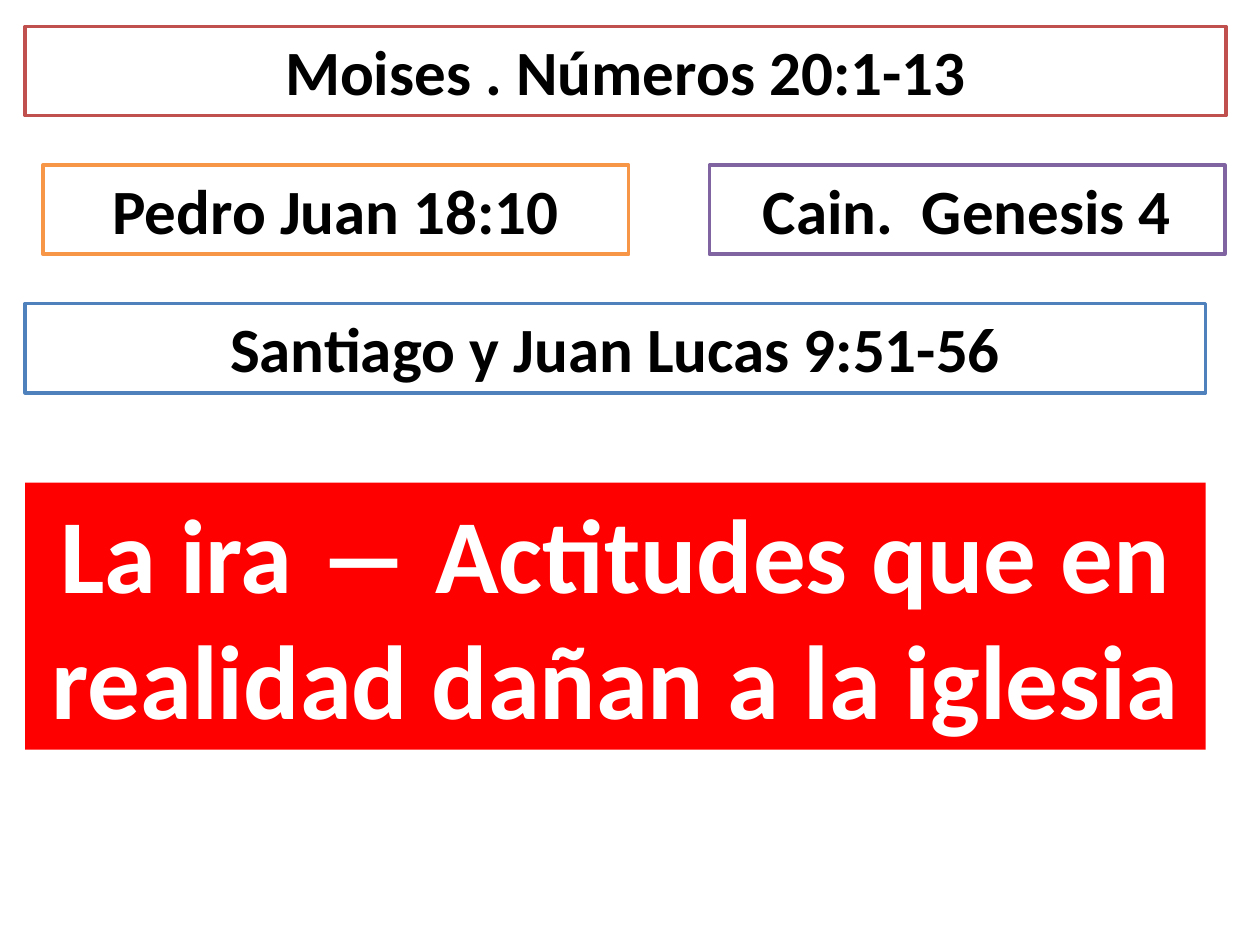
from pptx import Presentation
from pptx.dml.color import RGBColor as RGB
from pptx.enum.shapes import MSO_SHAPE as SHAPE
from pptx.enum.text import MSO_ANCHOR as ANCHOR, MSO_AUTO_SIZE as AUTO, PP_ALIGN as ALIGN
from pptx.util import Pt

COLORS = {
    "white": "FFFFFF", "black": "000000", "banner": "FF0000",
    "red": "C0504D", "purple": "8064A2", "orange": "F79646", "blue": "4F81BD",
}
LEFT, TOP, ROW_PITCH, ROW_HEIGHT = 14.4, 15.1, 79.2, 51
FULL_WIDTH = 674.6

# row, left, width, outline, text
VERSES = [
    (0, LEFT, 686.2, "red", "Moises . Números 20:1-13"),
    (1, 405.4, 294.5, "purple", "Cain.  Genesis 4"),
    (1, 24.5, 334.8, "orange", "Pedro Juan 18:10"),
    (2, LEFT, FULL_WIDTH, "blue", "Santiago y Juan Lucas 9:51-56"),
]
BANNER = "La ira ― Actitudes que en realidad dañan a la iglesia"


def color(name):
    return RGB.from_string(COLORS[name])


def add_box(slide, box, text, size, ink, fill, outline=None):
    sp = slide.shapes.add_shape(SHAPE.RECTANGLE, *map(Pt, box))
    sp.shadow.inherit = False
    sp.fill.solid()
    sp.fill.fore_color.rgb = color(fill)
    if outline:
        sp.line.color.rgb = color(outline)
        sp.line.width = Pt(2)
    else:
        sp.line.fill.background()
    tf = sp.text_frame
    tf.word_wrap = True
    tf.auto_size = AUTO.SHAPE_TO_FIT_TEXT
    tf.vertical_anchor = ANCHOR.TOP
    p = tf.paragraphs[0]
    p.text = text
    p.alignment = ALIGN.CENTER
    p.font.name = "Calibri"
    p.font.size = Pt(size)
    p.font.bold = True
    p.font.color.rgb = color(ink)


prs = Presentation()
prs.slide_width, prs.slide_height = Pt(720), Pt(540)
slide = prs.slides.add_slide(prs.slide_layouts[6])
for row, left, width, outline, text in VERSES:
    box = (left, TOP + row * ROW_PITCH, width, ROW_HEIGHT)
    add_box(slide, box, text, 36, "black", "white", outline)
add_box(slide, (LEFT, 275.8, FULL_WIDTH, 152.6), BANNER, 60, "white", "banner")
prs.save("out.pptx")
